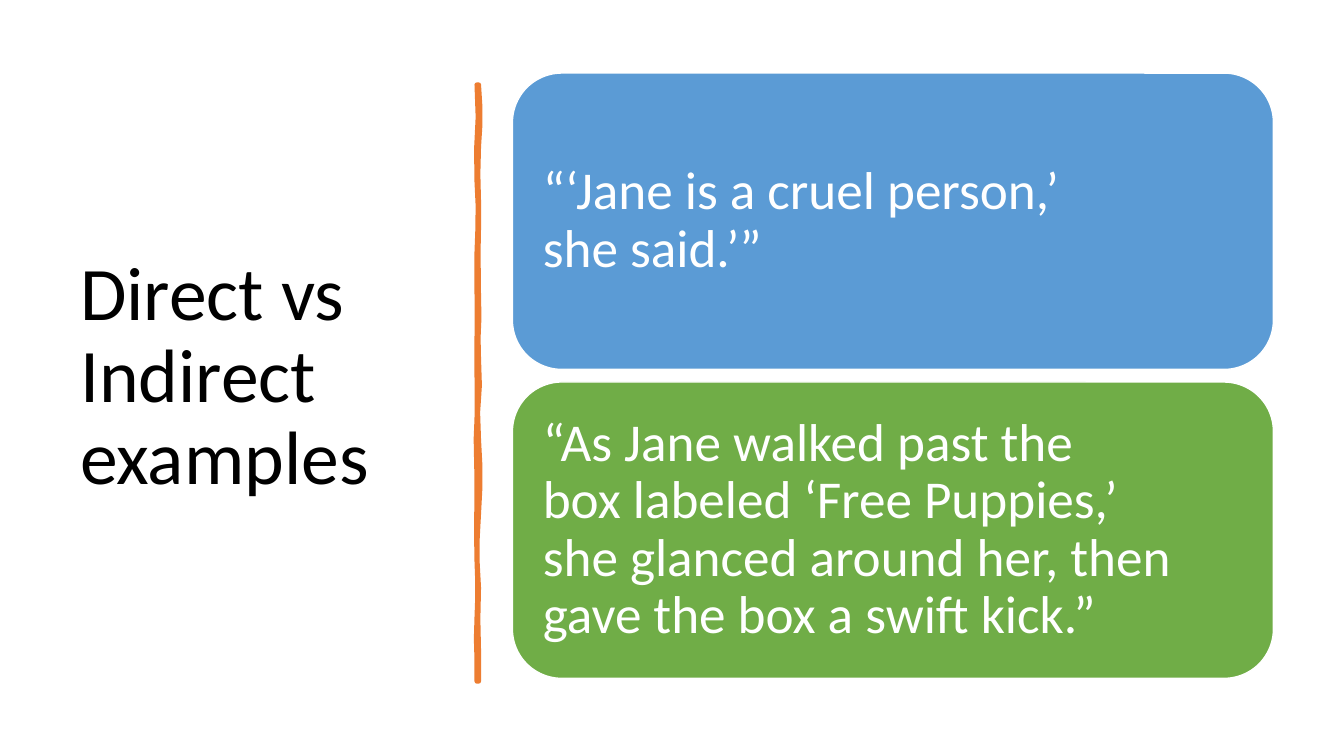
"""Build the slide that contrasts direct and indirect examples."""
from lxml import etree
from pptx import Presentation
from pptx.dml.color import RGBColor
from pptx.enum.shapes import MSO_SHAPE
from pptx.enum.text import MSO_ANCHOR, MSO_AUTO_SIZE, PP_ALIGN
from pptx.oxml.ns import qn
from pptx.util import Pt

ROUNDED = MSO_SHAPE.ROUNDED_RECTANGLE
MIDDLE = MSO_ANCHOR.MIDDLE
NO_AUTOFIT = MSO_AUTO_SIZE.NONE
LEFT = PP_ALIGN.LEFT

COLORS = {
    "black": "000000",
    "white": "FFFFFF",
    "orange": "ED7D31",
    "blue": "5B9BD5",
    "green": "70AD47",
}
FONT = "Calibri"
HARD_SPACE = chr(160)


def color(name):
    return RGBColor.from_string(COLORS[name])


def write_text(shape, text, size, color_name):
    frame = shape.text_frame
    frame.text = text
    frame.word_wrap = True
    frame.auto_size = NO_AUTOFIT
    frame.vertical_anchor = MIDDLE
    paragraph = frame.paragraphs[0]
    paragraph.alignment = LEFT
    paragraph.line_spacing = 0.9
    paragraph.font.name = FONT
    paragraph.font.size = Pt(size)
    paragraph.font.color.rgb = color(color_name)


presentation = Presentation()
presentation.slide_width = Pt(960)
presentation.slide_height = Pt(540)
slide = presentation.slides.add_slide(presentation.slide_layouts[5])

title = slide.shapes.title
title.left, title.top = Pt(50), Pt(50)
title.width, title.height = Pt(269), Pt(440)
write_text(title, "Direct vs Indirect examples", 54, "black")

# Each edge: x, start y, then (end y, first bend, second bend) per curve.
DIVIDER_EDGES = [
    (342, 60.5, [(105, 1.4, 1.4), (163, -1.4, 0.7), (212, -0.7, 0),
                 (256, 1.4, -1.4), (314, 2.9, -2.9), (367, 1.4, 1.4),
                 (420, -1.4, -1.4), (486.7, -1.4, 0.7)]),
    (340.6, 486.7, [(441, 0.7, -1.4), (401, 0.7, 0.7), (343, -0.7, 0),
                    (299, 0, -1.4), (241, 0.7, -0.7), (180, 0.7, -0.7),
                    (130, 0.7, 1.4), (60.5, -2.2, 2.9)]),
]
STEPS = 3
outline = []
for edge_x, y, curves in DIVIDER_EDGES:
    outline.append((edge_x, y))
    for end_y, first_bend, second_bend in curves:
        for step in range(1, STEPS + 1):
            t = step / STEPS
            bend = 3 * t * (1 - t) * ((1 - t) * first_bend + t * second_bend)
            outline.append((edge_x + bend, y + t * (end_y - y)))
        y = end_y

points = [(Pt(x), Pt(y)) for x, y in outline]
builder = slide.shapes.build_freeform(*points[0])
builder.add_line_segments(points[1:], close=True)
divider = builder.convert_to_shape()
divider.shadow.inherit = False
divider.fill.solid()
divider.fill.fore_color.rgb = color("orange")
divider.line.color.rgb = color("orange")
divider.line.width = Pt(3.25)
etree.SubElement(divider.element.spPr.find(qn("a:ln")), qn("a:round"))

# An underscore marks a space where the line must not break.
EXAMPLES = [
    ("blue", "“‘Jane is a cruel person,’ she_said.’”"),
    ("green", "“As Jane walked past the box_labeled_‘Free Puppies,’ "
              "she_glanced_around her, then gave the_box a swift_kick.”"),
]
CARD_TOP, CARD_HEIGHT, CARD_PITCH = 52.2, 211.7, 220.7
for index, (fill_name, text) in enumerate(EXAMPLES):
    card = slide.shapes.add_shape(
        ROUNDED, Pt(366), Pt(CARD_TOP + index * CARD_PITCH), Pt(543.6), Pt(CARD_HEIGHT))
    card.shadow.inherit = False
    card.fill.solid()
    card.fill.fore_color.rgb = color(fill_name)
    card.line.color.rgb = color("white")
    card.line.width = Pt(1)
    frame = card.text_frame
    frame.margin_left = frame.margin_right = Pt(11.4)
    frame.margin_top = frame.margin_bottom = Pt(11.4)
    write_text(card, text.replace("_", HARD_SPACE), 38, "white")

presentation.save("out.pptx")
